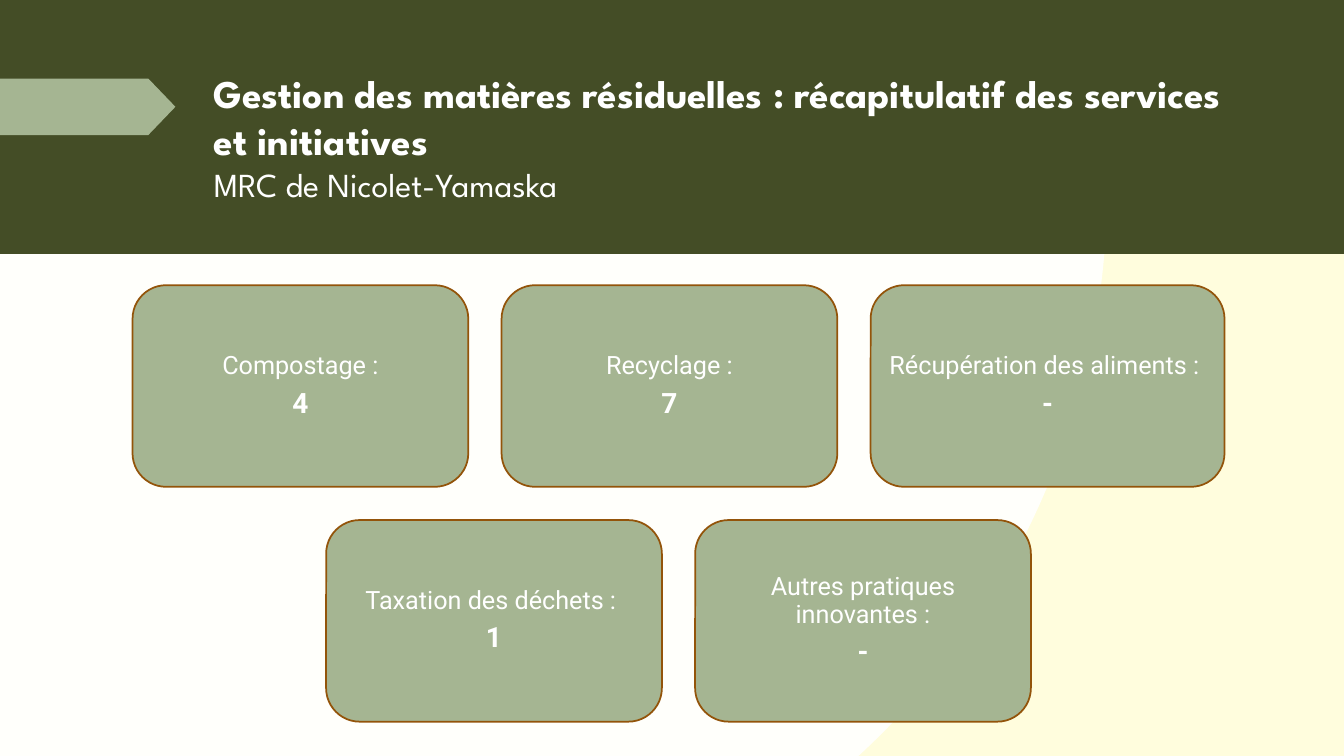
from pptx import Presentation
from pptx.dml.color import RGBColor
from pptx.enum.shapes import MSO_SHAPE
from pptx.enum.text import MSO_ANCHOR, MSO_AUTO_SIZE, PP_ALIGN
from pptx.oxml import parse_xml
from pptx.oxml.ns import nsdecls, qn
from pptx.util import Inches, Pt

RECTANGLE = MSO_SHAPE.RECTANGLE
ROUNDED = MSO_SHAPE.ROUNDED_RECTANGLE
PENTAGON = MSO_SHAPE.PENTAGON
MIDDLE = MSO_ANCHOR.MIDDLE
CENTER, LEFT = PP_ALIGN.CENTER, PP_ALIGN.LEFT

COLORS = {
    "band": "444D26",
    "sage": "A5B592",
    "outline": "93540A",
    "text": "FFFFFF",
    "ivory": "FFFFFB",
    "cream": "FFFDDD",
}


def add_filled(kind, left, top, width, height, color):
    shape = slide.shapes.add_shape(
        kind, Inches(left), Inches(top), Inches(width), Inches(height))
    shape.shadow.inherit = False
    shape.fill.solid()
    shape.fill.fore_color.rgb = RGBColor.from_string(COLORS[color])
    shape.line.fill.background()
    return shape


def format_run(run, font, size, bold):
    for name, value in {"name": font, "size": Pt(size), "bold": bold}.items():
        setattr(run.font, name, value)
    run.font.color.rgb = RGBColor.from_string(COLORS["text"])


prs = Presentation()
prs.slide_width, prs.slide_height = Inches(13.33), Inches(7.5)
slide = prs.slides.add_slide(prs.slide_layouts[5])

# Background: ivory circle on cream
background = slide.background.fill
background.gradient()
for stop, color in zip(background.gradient_stops, ("ivory", "cream")):
    stop.position = 1.0
    stop.color.rgb = RGBColor.from_string(COLORS[color])
linear = slide.element.find(".//" + qn("a:lin"))
linear.getparent().replace(linear, parse_xml(
    f'<a:path {nsdecls("a")} path="circle">'
    '<a:fillToRect l="50000" t="50000" r="100000" b="100000"/></a:path>'))

# Header band and arrow tab, placed behind the title
band = add_filled(RECTANGLE, 0, 0, 13.33, 2.52, "band")
tab = add_filled(PENTAGON, 0, 0.78, 1.74, 0.56, "sage")
tab.adjustments[0] = 0.48
title = slide.shapes.title
tab.element.addnext(title.element)

# Title
for name, value in {"left": 2.02, "top": 0.56, "width": 10.26, "height": 1.59}.items():
    setattr(title, name, Inches(value))
title_frame = title.text_frame
title_frame.word_wrap = True
title_frame.auto_size = MSO_AUTO_SIZE.NONE
title_frame.vertical_anchor = MIDDLE
heading = title_frame.paragraphs[0]
heading.alignment = LEFT
topic = heading.add_run()
topic.text = "Gestion des matières résiduelles : récapitulatif des services et initiatives"
format_run(topic, "League Spartan", 28, True)
heading.add_line_break()
region = heading.add_run()
region.text = "MRC de Nicolet-Yamaska"
format_run(region, "League Spartan", 24, False)

# Service cards: (label, count, width), each row centred on the same axis
CARD_ROWS = [
    [("Compostage :", "4", 3.33), ("Recyclage :", "7", 3.33),
     ("Récupération des aliments : ", "-", 3.51)],
    [("Taxation des déchets : ", "1", 3.33),
     ("Autres pratiques innovantes :", "-", 3.33)],
]
CARD_AXIS, CARD_TOP, CARD_HEIGHT, CARD_GAP = 6.73, 2.83, 2, 0.33

for row, cards in enumerate(CARD_ROWS):
    row_width = sum(width for _, _, width in cards) + CARD_GAP * (len(cards) - 1)
    left = CARD_AXIS - row_width / 2
    top = CARD_TOP + row * (CARD_HEIGHT + CARD_GAP)
    for label, count, width in cards:
        card = add_filled(ROUNDED, left, top, width, CARD_HEIGHT, "sage")
        card.line.color.rgb = RGBColor.from_string(COLORS["outline"])
        card.line.width = Pt(1.25)
        frame = card.text_frame
        frame.word_wrap = True
        frame.vertical_anchor = MIDDLE
        for side in ("left", "top", "right", "bottom"):
            setattr(frame, f"margin_{side}", Inches(0.07))
        lines = (frame.paragraphs[0], label, 18, False), (frame.add_paragraph(), count, 20, True)
        for paragraph, text, size, bold in lines:
            paragraph.alignment = CENTER
            paragraph.line_spacing = 0.9
            paragraph.space_after = Pt(size * 0.35)
            run = paragraph.add_run()
            run.text = text
            format_run(run, "Roboto", size, bold)
        left += width + CARD_GAP

prs.save("out.pptx")
